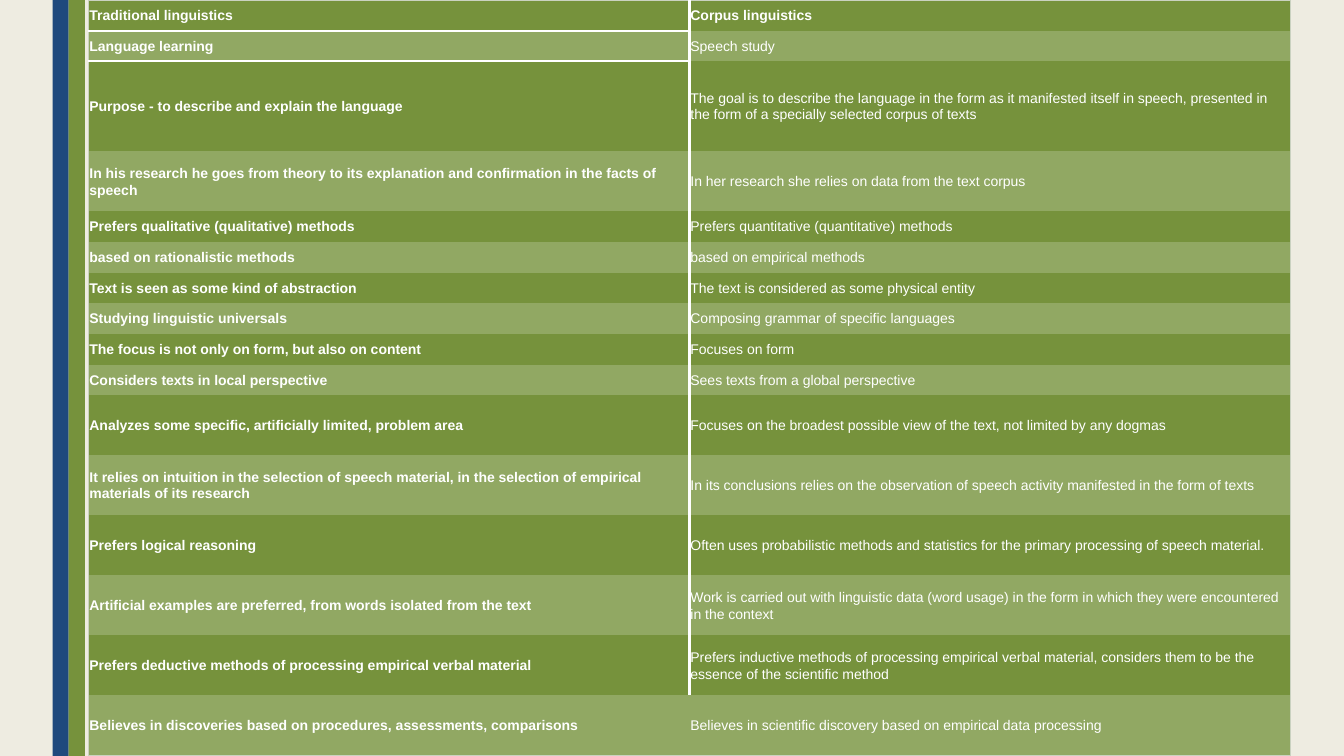
from lxml.etree import SubElement as Sub
from pptx import Presentation
from pptx.dml.color import RGBColor as RGB
from pptx.enum.shapes import MSO_SHAPE as Shape
from pptx.enum.text import MSO_ANCHOR as Anchor
from pptx.oxml.ns import qn
from pptx.util import Pt

HUES = {"paper": "EEECE1", "green": "76923C", "light": "91A863",
        "blue": "1F497D", "white": "FFFFFF", "edge": "CAD2C0"}
PLAIN = "{2D5ABB26-0587-4C30-8999-92F81FD0307C}"
LOW, MID, TALL = 21.9, 42.9, 64.3

ROWS = [
    (LOW, "Traditional linguistics", "Corpus linguistics"),
    (LOW, "Language learning", "Speech study"),
    (TALL, "Purpose - to describe and explain the language",
     "The goal is to describe the language in the form as it manifested itself in speech, "
     "presented in the form of a specially selected corpus of texts"),
    (MID, "In his research he goes from theory to its explanation and confirmation in the facts of speech",
     "In her research she relies on data from the text corpus"),
    (LOW, "Prefers qualitative (qualitative) methods", "Prefers quantitative (quantitative) methods"),
    (LOW, "based on rationalistic methods", "based on empirical methods"),
    (LOW, "Text is seen as some kind of abstraction", "The text is considered as some physical entity"),
    (LOW, "Studying linguistic universals", "Composing grammar of specific languages"),
    (LOW, "The focus is not only on form, but also on content", "Focuses on form"),
    (LOW, "Considers texts in local perspective", "Sees texts from a global perspective"),
    (MID, "Analyzes some specific, artificially limited, problem area",
     "Focuses on the broadest possible view of the text, not limited by any dogmas"),
    (MID, "It relies on intuition in the selection of speech material, "
     "in the selection of empirical materials of its research",
     "In its conclusions relies on the observation of speech activity manifested in the form of texts"),
    (MID, "Prefers logical reasoning",
     "Often uses probabilistic methods and statistics for the primary processing of speech material."),
    (MID, "Artificial examples are preferred, from words isolated from the text",
     "Work is carried out with linguistic data (word usage) in the form "
     "in which they were encountered in the context"),
    (MID, "Prefers deductive methods of processing empirical verbal material",
     "Prefers inductive methods of processing empirical verbal material, "
     "considers them to be the essence of the scientific method"),
    (MID, "Believes in discoveries based on procedures, assessments, comparisons",
     "Believes in scientific discovery based on empirical data processing"),
]


def hue(name):
    return RGB.from_string(HUES[name])


def paint(fill, name):
    fill.solid()
    fill.fore_color.rgb = hue(name)


def draw_bars(slide, left, top, width, height):
    for i, name in enumerate(("blue", "green")):
        bar = slide.shapes.add_shape(
            Shape.RECTANGLE, Pt(left + i * width / 2), Pt(top), Pt(width / 2), Pt(height))
        bar.shadow.inherit = False
        bar.line.fill.background()
        paint(bar.fill, name)


def rule_cell(cell, sides):
    props = cell._tc.get_or_add_tcPr()
    for i, side in enumerate(side for side in "LRTB" if side in sides):
        name, width = sides[side]
        line = Sub(props, qn(f"a:ln{side}"), w=str(Pt(width)))
        Sub(Sub(line, qn("a:solidFill")), qn("a:srgbClr"), val=HUES[name])
        props.insert(i, line)


def pick_sides(row, col, last):
    edge = ("edge", 0.5)
    sides = {"R" if col else "L": edge}
    if row < last:
        sides["L" if col else "R"] = ("white", 2.75)
    if row == 0:
        sides["T"] = edge
    if row == last:
        sides["B"] = edge
    if col == 0 and row < 2:
        sides["T" if row else "B"] = ("white", 1.5)
    return sides


def fill_cell(cell, text, name, bold):
    cell.text = text
    cell.vertical_anchor = Anchor.MIDDLE
    cell.margin_left = cell.margin_right = Pt(0.7)
    cell.margin_top = cell.margin_bottom = Pt(0.7)
    para = cell.text_frame.paragraphs[0]
    para.line_spacing = 1.07
    para.space_after = Pt(8)
    font = para.font
    font.name, font.size, font.bold = "Arial", Pt(10), bold
    font.color.rgb = hue("white")
    paint(cell.fill, name)


def draw_table(slide, left, top, width, height):
    grid = slide.shapes.add_table(
        len(ROWS), 2, Pt(left), Pt(top), Pt(width), Pt(height)).table
    grid.first_row = grid.horz_banding = False
    grid._tbl.tblPr.find(qn("a:tableStyleId")).text = PLAIN
    for column in grid.columns:
        column.width = Pt(width / 2)
    for row, (tall, *texts) in enumerate(ROWS):
        grid.rows[row].height = Pt(tall)
        for col, text in enumerate(texts):
            cell = grid.cell(row, col)
            fill_cell(cell, text, "light" if row % 2 else "green", row == 0 or col == 0)
            rule_cell(cell, pick_sides(row, col, len(ROWS) - 1))


def main():
    deck = Presentation()
    deck.slide_width, deck.slide_height = Pt(960), Pt(540)
    slide = deck.slides.add_slide(deck.slide_layouts[6])
    paint(slide.background.fill, "paper")
    draw_bars(slide, 37.6, 0, 23, 540)
    draw_table(slide, 63.2, 0, 858.6, 540)
    deck.save("out.pptx")


if __name__ == "__main__":
    main()
